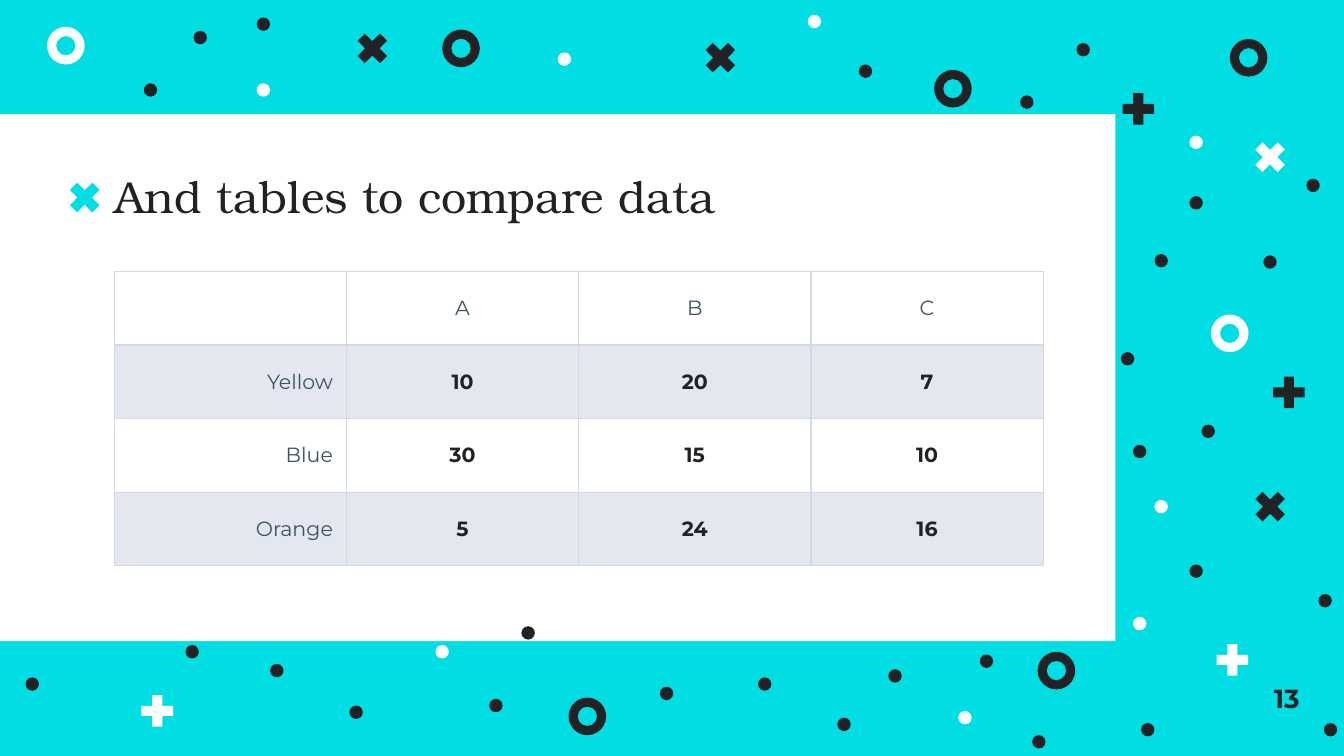
from lxml.etree import SubElement
from pptx import Presentation
from pptx.dml.color import RGBColor
from pptx.enum.shapes import MSO_SHAPE as SHAPE
from pptx.enum.text import MSO_ANCHOR as ANCHOR, PP_ALIGN as ALIGN
from pptx.oxml.ns import qn
from pptx.util import Inches, Pt

CYAN = RGBColor(0x00, 0xDE, 0xE4)
DARK = RGBColor(0x21, 0x22, 0x25)
WHITE = RGBColor(0xFF, 0xFF, 0xFF)
SLATE = RGBColor(0x3C, 0x53, 0x61)
NAVY = RGBColor(0x00, 0x1B, 0x6C)
BORDER = RGBColor(0xCE, 0xDB, 0xE2)

SERIF, SANS = "TeX Gyre Bonum", "Montserrat"
WIDTH, HEIGHT = Inches(10), Inches(5.625)
UNIT = WIDTH / 100  # the grid has 100 columns and 56.25 rows

# Confetti as (column, row) of the top left corner
DOTS = {
    DARK: [
        (20.1, 49.4), (19.1, 1.3), (14.4, 2.3), (10.7, 6.2), (63.9, 4.8),
        (75.9, 7.1), (80.1, 3.2), (1.9, 50.4), (13.8, 48), (38.8, 46.6),
        (88.5, 42), (88.5, 14.6), (89.4, 31.6), (85.9, 18.9), (84.3, 33.1),
        (97.2, 13.3), (94, 19), (83.4, 26.2), (76.8, 54.7), (66.1, 49.8),
        (98.1, 44.2), (98.5, 53.8), (72.9, 48.7), (84.9, 53.8), (56.4, 50.4),
        (49.1, 51.1), (26, 52.5), (36.4, 52), (62.3, 53.4),
    ],
    WHITE: [
        (19.1, 6.2), (41.5, 3.9), (32.4, 48), (88.5, 10.1), (85.9, 37.2),
        (84.3, 45.9), (60.1, 1.1), (71.3, 52.9),
    ],
}
RINGS = {
    DARK: [(69.5, 5.2), (42.3, 51.9), (77.2, 48.5), (91.5, 2.9), (32.9, 2.2)],
    WHITE: [(3.5, 2), (90.1, 23.4)],
}
PLUSES = {
    DARK: [(83.1, 6.5), (94.3, 27.6)],
    WHITE: [(90.1, 47.5), (10.1, 51.3)],
}
CROSSES = {
    DARK: [(26.1, 2), (52, 2.7), (92.9, 36.1)],
    WHITE: [(92.9, 10.1)],
    CYAN: [(4.7, 13.1)],  # marks the title
}

ROWS = [
    ["", "A", "B", "C"],
    ["Yellow", "10", "20", "7"],
    ["Blue", "30", "15", "10"],
    ["Orange", "5", "24", "16"],
]


def grid(*values):
    return [round(v * UNIT) for v in values]


def add_mark(s, kind, box, color, adj=None, rotation=0):
    sp = s.shapes.add_shape(kind, *grid(*box))
    sp.shadow.inherit = False
    sp.fill.solid()
    sp.fill.fore_color.rgb = color
    sp.line.fill.background()
    sp.rotation = rotation
    if adj is not None:
        sp.adjustments[0] = adj


def scatter(s, kind, size, places, adj=None, rotation=0):
    for color, corners in places.items():
        for col, row in corners:
            add_mark(s, kind, (col, row, size, size), color, adj, rotation)


def style(p, font, size, color, align, bold=False):
    p.alignment = align
    p.font.name, p.font.size, p.font.bold = font, Pt(size), bold
    p.font.color.rgb = color


def add_text(s, box, text, anchor, *look):
    tf = s.shapes.add_textbox(*grid(*box)).text_frame
    tf.word_wrap = True
    tf.vertical_anchor = anchor
    tf.margin_left = tf.margin_right = tf.margin_top = tf.margin_bottom = 0
    p = tf.paragraphs[0]
    p.text = text
    style(p, *look)
    return p


def add_borders(cell):
    tc_pr = cell._tc.get_or_add_tcPr()
    for index, side in enumerate(("lnL", "lnR", "lnT", "lnB")):
        ln = SubElement(tc_pr, qn(f"a:{side}"), w=str(Pt(0.75)))
        fill = SubElement(ln, qn("a:solidFill"))
        SubElement(fill, qn("a:srgbClr"), val=str(BORDER))
        tc_pr.remove(ln)
        tc_pr.insert(index, ln)  # borders come before the fill


def fill_cell(cell, shaded):
    if not shaded:
        cell.fill.background()
        return
    cell.fill.solid()
    cell.fill.fore_color.rgb = NAVY
    color = cell._tc.tcPr.find(f".//{qn('a:srgbClr')}")
    SubElement(color, qn("a:alpha"), val="10000")


def add_data_table(s, left, top, col_width, row_height):
    box = grid(left, top, col_width * len(ROWS[0]), row_height * len(ROWS))
    table = s.shapes.add_table(len(ROWS), len(ROWS[0]), *box).table
    table.first_row = table.horz_banding = False
    for r, values in enumerate(ROWS):
        for c, value in enumerate(values):
            cell = table.cell(r, c)
            cell.vertical_anchor = ANCHOR.MIDDLE
            cell.margin_left = cell.margin_right = Inches(0.1)
            cell.margin_top = cell.margin_bottom = Inches(0.07)
            fill_cell(cell, shaded=r % 2 == 1)
            add_borders(cell)
            cell.text = value
            is_number = r > 0 and c > 0
            style(cell.text_frame.paragraphs[0], SANS, 11,
                  DARK if is_number else SLATE,
                  ALIGN.CENTER if c else ALIGN.RIGHT, is_number)


def main():
    prs = Presentation()
    prs.slide_width, prs.slide_height = WIDTH, HEIGHT
    s = prs.slides.add_slide(prs.slide_layouts[6])
    s.background.fill.solid()
    s.background.fill.fore_color.rgb = CYAN

    # White panel and confetti
    add_mark(s, SHAPE.RECTANGLE, (0, 8.5, 83, 39.2), WHITE)
    scatter(s, SHAPE.OVAL, 1, DOTS)
    scatter(s, SHAPE.DONUT, 2.8, RINGS, 0.242)
    scatter(s, SHAPE.MATH_PLUS, 3.2, PLUSES, 0.235)
    scatter(s, SHAPE.MATH_PLUS, 3.2, CROSSES, 0.235, 45)

    # Title
    title = add_text(s, (8.5, 12.6, 65.9, 4), "And tables to compare data",
                     ANCHOR.BOTTOM, SERIF, 24, DARK, ALIGN.LEFT)
    title.line_spacing = 0.9

    # Table
    add_data_table(s, 8.5, 20.2, 17.28, 5.48)

    # Slide number
    add_text(s, (91.5, 47.7, 8.5, 8.5), "13",
             ANCHOR.MIDDLE, SANS, 14, DARK, ALIGN.CENTER, True)

    prs.save("out.pptx")


if __name__ == "__main__":
    main()
